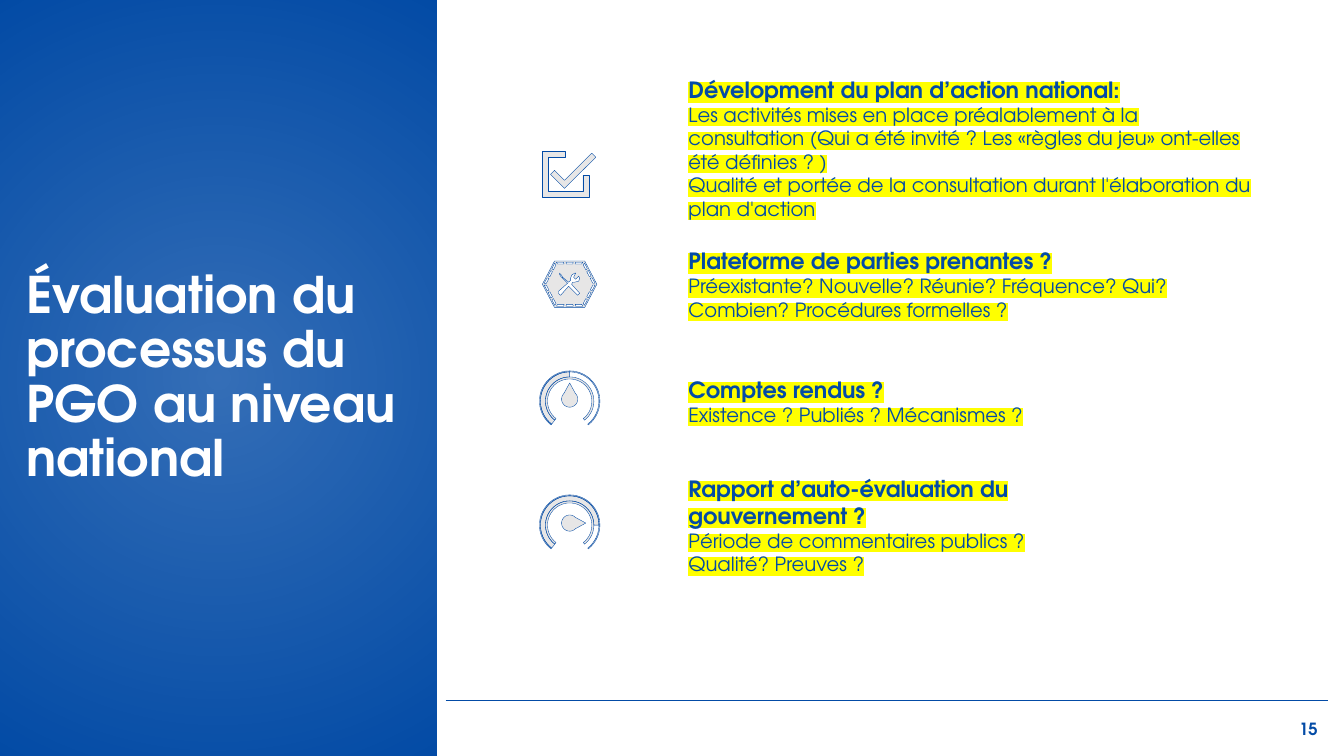
"""Build the slide on evaluating the national OGP process."""
from copy import deepcopy
from math import cos, radians, sin

from pptx import Presentation
from pptx.dml.color import RGBColor
from pptx.enum.shapes import MSO_CONNECTOR, MSO_SHAPE
from pptx.enum.text import MSO_ANCHOR, MSO_AUTO_SIZE, PP_ALIGN
from pptx.oxml import parse_xml
from pptx.oxml.ns import nsdecls, qn
from pptx.util import Inches, Pt

BLUE, GREY, WHITE, YELLOW = "034BA6", "E7E6E6", "FFFFFF", "FFFF00"
FONT = "TeX Gyre Adventor"

TICK = [
    [(5.87, 1.52), (5.91, 1.56), (5.6, 1.87), (5.46, 1.73), (5.5, 1.69), (5.6, 1.79)],
    [(5.38, 1.5), (5.61, 1.5), (5.61, 1.56), (5.44, 1.56), (5.44, 1.9),
     (5.78, 1.9), (5.78, 1.74), (5.84, 1.74), (5.84, 1.96), (5.38, 1.96)],
]
TOOLS = [
    (5.7, 2.71), (5.67, 2.73), (5.66, 2.76), (5.66, 2.78), (5.64, 2.8),
    (5.58, 2.75), (5.57, 2.73), (5.55, 2.71), (5.55, 2.72), (5.56, 2.74),
    (5.57, 2.75), (5.63, 2.81), (5.54, 2.89), (5.54, 2.91), (5.56, 2.93),
    (5.57, 2.92), (5.64, 2.84), (5.73, 2.93), (5.75, 2.91), (5.67, 2.82),
    (5.68, 2.8), (5.7, 2.8), (5.74, 2.79), (5.75, 2.76), (5.74, 2.74),
    (5.71, 2.77), (5.69, 2.75), (5.71, 2.71),
]


def color(code):
    """Turn a hex string into a colour."""
    return RGBColor.from_string(code)


def arc(x, y, size, start, stop):
    """Return points along a circle, angles in degrees."""
    turns = [radians(start + (stop - start) * i / 40) for i in range(41)]
    return [(x + size * cos(t), y + size * sin(t)) for t in turns]


def band(x, y, inner, outer, stop):
    """Return a ring part that starts at the lower left."""
    return arc(x, y, outer, 128, stop) + arc(x, y, inner, stop, 128)


def gauge(x, y, aim):
    """Return the outlines of a dial whose drop points to an angle."""
    mid, turn = y - 0.02, radians(aim)
    tip = (x + 0.16 * cos(turn), mid + 0.16 * sin(turn))
    drop = [tip] + arc(x, mid, 0.08, aim + 45, aim + 315)
    return [band(x, y, 0.29, 0.3, 412), band(x, y, 0.22, 0.24, 412),
            band(x, y, 0.24, 0.29, aim), drop]


def badge(x, y):
    """Return a hexagon with a stitched edge and crossed tools."""
    half = [(0.27, 0), (0.15, 0.23), (-0.15, 0.23)]
    rim = half + [(-a, -b) for a, b in half]
    paths = [[(x + a, y + b) for a, b in rim], TOOLS]
    for (a, b), (c, d) in zip(rim, rim[1:] + rim[:1]):
        for i in range(3):
            low, high = i / 3 + 0.04, i / 3 + 0.29
            ends = [(low, 0.95), (high, 0.95), (high, 0.87), (low, 0.87)]
            paths.append([(x + k * (a + (c - a) * t), y + k * (b + (d - b) * t))
                          for t, k in ends])
    return paths


class Page:
    """Holds the style and the current slide."""

    def __init__(self, deck):
        """Add a slide with a title only."""
        self.slide = deck.slides.add_slide(deck.slide_layouts[5])
        self.shapes = self.slide.shapes

    def style(self, run, size, tint, bold):
        """Format one run."""
        run.font.size, run.font.bold, run.font.name = Pt(size), bold, FONT
        run.font.color.rgb = color(tint)

    def frame(self, shape):
        """Set up the text frame of a shape."""
        text = shape.text_frame
        text.word_wrap, text.auto_size = True, MSO_AUTO_SIZE.NONE
        text.vertical_anchor = MSO_ANCHOR.MIDDLE
        return text

    def panel(self, x, y, w, h):
        """Draw a box with a glow from its centre."""
        shape = self.shapes.add_shape(
            MSO_SHAPE.RECTANGLE, Inches(x), Inches(y), Inches(w), Inches(h))
        shape.shadow.inherit = False
        shape.line.fill.background()
        shape.fill.background()
        glow = parse_xml(
            f'<a:gradFill {nsdecls("a")} rotWithShape="1"><a:gsLst>'
            f'<a:gs pos="0"><a:srgbClr val="{BLUE}"><a:alpha val="80000"/></a:srgbClr></a:gs>'
            f'<a:gs pos="100000"><a:srgbClr val="{BLUE}"/></a:gs></a:gsLst>'
            '<a:path path="circle"><a:fillToRect l="50000" t="50000" r="50000" b="50000"/>'
            '</a:path></a:gradFill>')
        props = shape._element.spPr
        props.replace(props.find(qn("a:noFill")), glow)

    def rule(self, x, y, end):
        """Draw a level line."""
        line = self.shapes.add_connector(
            MSO_CONNECTOR.STRAIGHT, Inches(x), Inches(y), Inches(end), Inches(y))
        line.line.color.rgb, line.line.width = color(BLUE), Pt(0.75)
        line._element.spPr.append(parse_xml(f'<a:effectLst {nsdecls("a")}/>'))

    def title(self, words, x, y, w, h):
        """Fill the title and bring it to the front."""
        shape = self.shapes.title
        shape.left, shape.top = Inches(x), Inches(y)
        shape.width, shape.height = Inches(w), Inches(h)
        text = self.frame(shape)
        text.text = words
        para = text.paragraphs[0]
        para.alignment, para.line_spacing = PP_ALIGN.LEFT, 0.9
        self.style(para.runs[0], 36, WHITE, True)
        self.shapes._spTree.append(shape._element)

    def number(self, words, x, y, w, h):
        """Write the slide number."""
        box = self.shapes.add_textbox(Inches(x), Inches(y), Inches(w), Inches(h))
        text = self.frame(box)
        text.text = words
        text.paragraphs[0].alignment = PP_ALIGN.RIGHT
        self.style(text.paragraphs[0].runs[0], 12, BLUE, True)

    def topic(self, words, y, w, paths):
        """Group a marked text with its icon."""
        group = self.shapes.add_group_shape()
        box = group.shapes.add_textbox(Inches(6.73), Inches(y), Inches(w), Inches(0.48))
        para = self.frame(box).paragraphs[0]
        para.text = words
        for i, run in enumerate(para.runs):
            self.style(run, 14 if i else 16, BLUE, i == 0)
            mark = parse_xml(f'<a:highlight {nsdecls("a")}>'
                             f'<a:srgbClr val="{YELLOW}"/></a:highlight>')
            run._r.rPr.find(qn("a:solidFill")).addnext(mark)
        for gap in para._p.findall(qn("a:br")):
            gap.insert(0, deepcopy(gap.getprevious().rPr))
        self.icon(group.shapes, paths)

    def icon(self, shapes, paths):
        """Draw closed outlines as one shape."""
        outs = [[(Inches(x), Inches(y)) for x, y in path] for path in paths]
        pen = shapes.build_freeform(*outs[0][0])
        pen.add_line_segments(outs[0][1:])
        for out in outs[1:]:
            pen.move_to(*out[0])
            pen.add_line_segments(out[1:])
        shape = pen.convert_to_shape()
        shape.shadow.inherit = False
        shape.fill.solid()
        shape.fill.fore_color.rgb = color(GREY)
        shape.line.color.rgb, shape.line.width = color(BLUE), Pt(0.25)


def main():
    """Build and save the deck."""
    deck = Presentation()
    deck.slide_width, deck.slide_height = Inches(13.33), Inches(7.5)
    page = Page(deck)
    page.panel(0, 0, 4.33, 7.5)
    page.rule(4.42, 6.95, 13.17)
    page.title("Évaluation du processus du PGO au niveau national", 0.16, 2.21, 3.99, 3.09)
    page.number("15", 9.61, 7.03, 3.56, 0.4)
    topics = [
        ("Dévelopment du plan d’action national:\n"
         "Les activités mises en place préalablement à la consultation "
         "(Qui a été invité ? Les «règles du jeu» ont-elles été définies ? )\n"
         "Qualité et portée de la consultation durant l'élaboration du plan d'action",
         1.23, 5.82, TICK),
        ("Comptes rendus ?\nExistence ? Publiés ? Mécanismes ?",
         3.74, 3.86, gauge(5.65, 3.98, 270)),
        ("Rapport d’auto-évaluation du gouvernement ?\n"
         "Période de commentaires publics ? Qualité? Preuves ?",
         4.97, 3.86, gauge(5.65, 5.21, 360)),
        ("Plateforme de parties prenantes ?\n"
         "Préexistante? Nouvelle? Réunie? Fréquence? Qui? Combien? Procédures formelles ?",
         2.58, 5.45, badge(5.65, 2.82)),
    ]
    for topic in topics:
        page.topic(*topic)
    deck.save("out.pptx")


if __name__ == "__main__":
    main()
